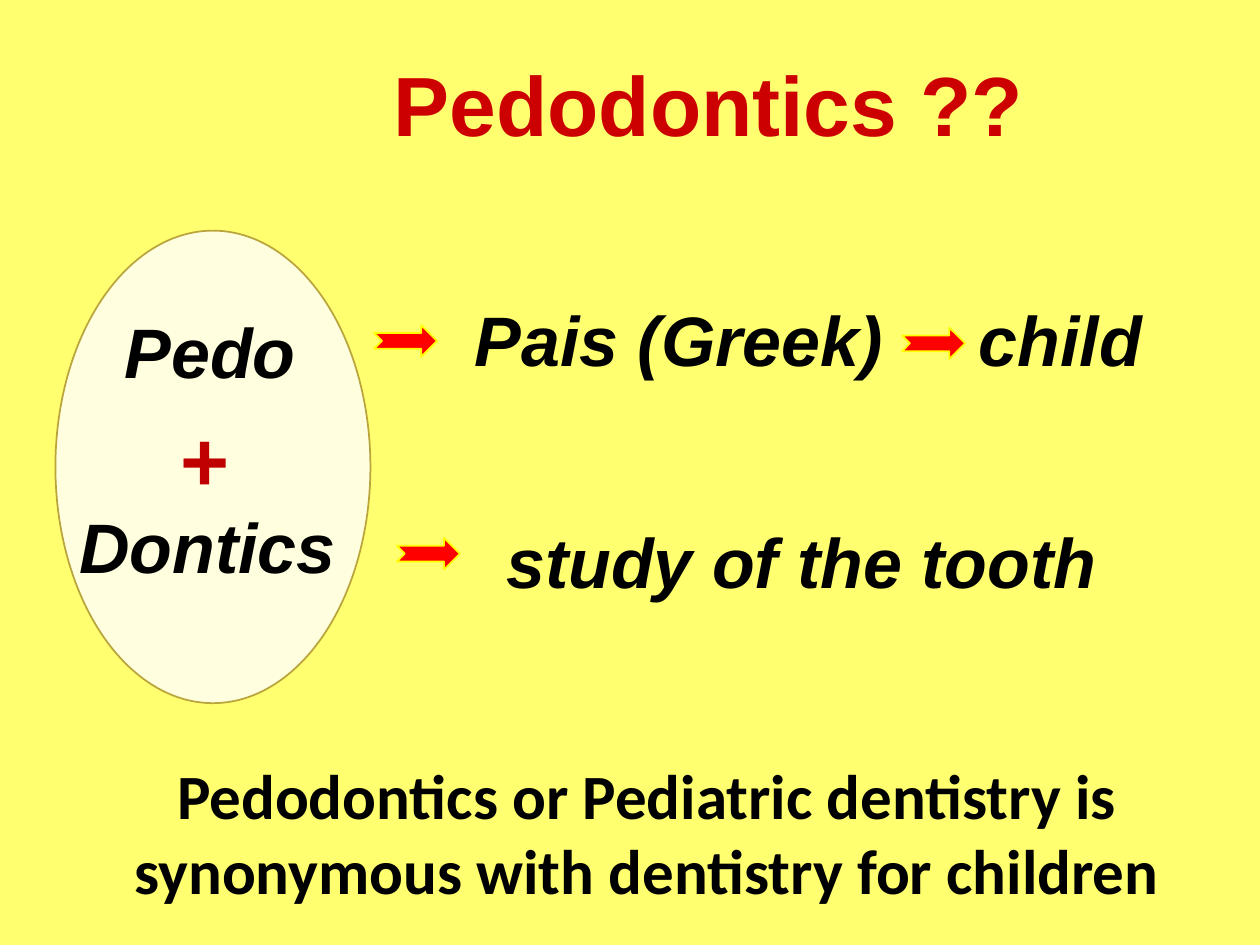
from pptx import Presentation
from pptx import util as u
from pptx.dml import color
from pptx.enum import shapes, text

Pt = u.Pt
SHAPE = shapes.MSO_SHAPE
ALIGN = text.PP_ALIGN
ANCHOR = text.MSO_ANCHOR
INK = "000000"


def tint(code):
    return color.RGBColor.from_string(code)


def place(box, x, y, w, h):
    return box[0] + x, box[1] + y, w, h


def form(slide, kind, box, fill, line):
    shape = slide.shapes.add_shape(kind, *map(Pt, box))
    shape.shadow.inherit = False
    shape.fill.solid()
    shape.fill.fore_color.rgb = tint(fill)
    shape.line.color.rgb = tint(line)
    shape.line.width = Pt(1)


def label(slide, box, words, size=40, ink=INK, face="Arial", slant=True,
          align=ALIGN.LEFT, anchor=ANCHOR.TOP, top=7.6, wrap=False):
    frame = slide.shapes.add_textbox(*map(Pt, box)).text_frame
    layout = {"word_wrap": wrap, "vertical_anchor": anchor,
              "margin_top": Pt(top), "margin_bottom": Pt(0)}
    for key, value in layout.items():
        setattr(frame, key, value)
    para = frame.paragraphs[0]
    para.alignment = align
    run = para.add_run()
    run.text = words
    style = {"name": face, "size": Pt(size), "bold": True, "italic": slant}
    for key, value in style.items():
        setattr(run.font, key, value)
    run.font.color.rgb = tint(ink)


def arrow(slide, box):
    form(slide, SHAPE.NOTCHED_RIGHT_ARROW, box, "FF0000", "FFFF00")


def title(slide, box):
    label(slide, box, "Pedodontics ??", 48, "CC0000", slant=False,
          align=ALIGN.CENTER, anchor=ANCHOR.BOTTOM, top=3.6, wrap=True)


def oval(slide, box):
    form(slide, SHAPE.OVAL, box, "FFFFDF", "BAA53D")
    label(slide, place(box, 32.4, 36.7, 126, 55.4), "Pedo")
    label(slide, place(box, 6.5, 148.3, 173.5, 55.4), "Dontics")
    label(slide, place(box, 64.1, 93.6, 42.5, 65.5), "+", 48, "C00000",
          slant=False)


def roots(slide, box):
    for x, y in ((0, 23.8), (301.7, 25.2), (13, 145.4)):
        arrow(slide, place(box, x, y, 36, 18))
    for x, y, w, words in ((50.4, 0, 261.4, "Pais (Greek)"),
                           (338.4, 0, 119.5, "child"),
                           (68.4, 126.7, 355.7, "study of the tooth")):
        label(slide, place(box, x, y, w, 55.4), words)


def summary(slide, box):
    label(slide, box, "Pedodontics or Pediatric dentistry is synonymous "
          "with dentistry for children", 36, face="Calibri", slant=False,
          align=ALIGN.CENTER, top=5, wrap=True)


def main():
    deck = Presentation()
    deck.slide_width, deck.slide_height = Pt(720), Pt(540)
    slide = deck.slides.add_slide(deck.slide_layouts[6])
    slide.background.fill.solid()
    slide.background.fill.fore_color.rgb = tint("FFFF70")
    oval(slide, (31.7, 131.8, 180, 270))
    title(slide, (108, 33.8, 594, 54))
    roots(slide, (213.8, 162, 458, 182))
    summary(slide, (21.6, 427, 696.2, 94.3))
    deck.save("out.pptx")


if __name__ == "__main__":
    main()
